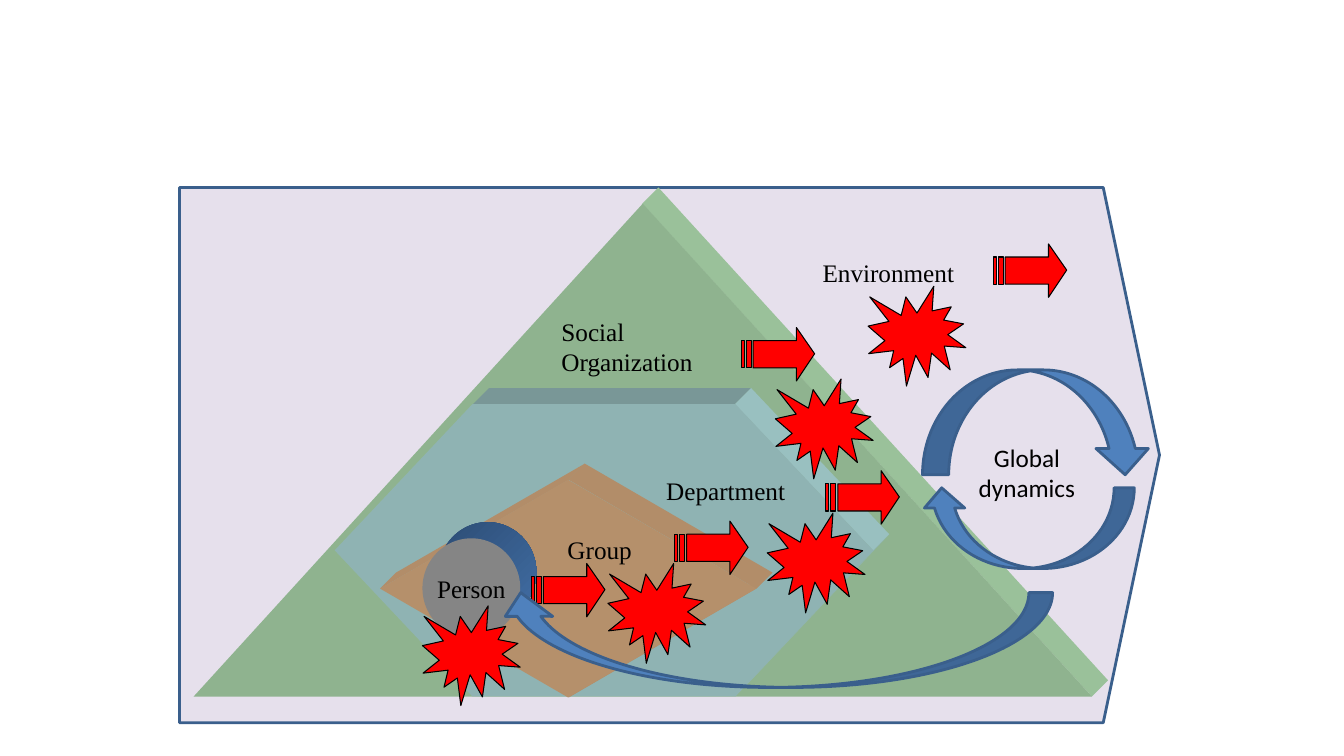
import pptx
import pptx.dml.color
import pptx.enum.shapes
import pptx.enum.text
import pptx.util

Inches = pptx.util.Inches
Pt = pptx.util.Pt
SHAPE = pptx.enum.shapes.MSO_SHAPE
ALIGN = pptx.enum.text.PP_ALIGN

COLORS = {
    "environment": "E6E0EC",
    "organization": "8FB38F",
    "organization side": "9AC19A",
    "department": "8FB3B3",
    "department top": "799797",
    "department side": "99C0C0",
    "group": "B5906B",
    "group side": "B28D69",
    "person": "858585",
    "person dark": "2C4D75",
    "person light": "426EA5",
    "red": "FF0000",
    "blue": "4F81BD",
    "outline": "3A5F8C",
    "black": "000000",
}
DEPTH = 0.16

LABELS = [
    ("Department", 6.51, 4.67, 1.4, 0.4),
    ("Social Organization", 5.47, 3.09, 1.79, 0.71),
    ("Environment", 8.06, 2.5, 2.11, 0.4),
    ("Group", 5.53, 5.25, 1.1, 0.4),
]
STRIPED_ARROWS = [(9.85, 2.42), (5.27, 5.59), (7.35, 3.25), (6.69, 5.17), (8.19, 4.67)]
BURSTS = [(6.03, 5.59), (7.61, 5.09), (7.69, 3.76), (8.61, 2.84), (4.19, 6.01)]


def rgb(name):
    return pptx.dml.color.RGBColor.from_string(COLORS[name])


def paint(shape, fill, line=None, width=0.75):
    shape.shadow.inherit = False
    shape.fill.solid()
    shape.fill.fore_color.rgb = rgb(fill)
    if line:
        shape.line.color.rgb = rgb(line)
        shape.line.width = Pt(width)
    else:
        shape.line.fill.background()


def add_preset(slide, kind, box, fill, line=None, width=0.75, adjustments=()):
    shape = slide.shapes.add_shape(kind, *map(Inches, box))
    for index, value in enumerate(adjustments):
        shape.adjustments[index] = value
    paint(shape, fill, line, width)
    return shape


def add_outline(slide, contours, fill, line=None):
    """Draw one freeform from closed contours given in inches."""
    contours = [[(Inches(x), Inches(y)) for x, y in contour] for contour in contours]
    builder = slide.shapes.build_freeform(*contours[0][0], scale=1.0)
    for index, contour in enumerate(contours):
        if index:
            builder.move_to(*contour[0])
        builder.add_line_segments(contour[1:], close=True)
    paint(builder.convert_to_shape(), fill, line)


def add_face(slide, start, end, fill):
    """Draw the side that an edge sweeps out, up and to the right."""
    back = [(x + DEPTH, y - DEPTH) for x, y in (end, start)]
    add_outline(slide, [[start, end, *back]], fill)


def format_text(text_frame, text, font_name, align):
    text_frame.text = text
    for paragraph in text_frame.paragraphs:
        paragraph.alignment = align
        for run in paragraph.runs:
            run.font.name = font_name
            run.font.size = Pt(18)
            run.font.color.rgb = rgb("black")


def add_label(slide, text, left, top, width, height,
              font_name="Times New Roman", align=ALIGN.LEFT):
    box = slide.shapes.add_textbox(*map(Inches, (left, top, width, height)))
    box.text_frame.word_wrap = True
    format_text(box.text_frame, text, font_name, align)


def add_striped_arrow(slide, left, top):
    def bar(start, end):
        return [(left + start, top + 0.13), (left + start, top + 0.4),
                (left + end, top + 0.4), (left + end, top + 0.13)]

    head = [(0.55, 0), (0.55, 0.13), (0.12, 0.13), (0.12, 0.4),
            (0.55, 0.4), (0.55, 0.53), (0.73, 0.26)]
    arrow = [(left + x, top + y) for x, y in head]
    add_outline(slide, [arrow, bar(0.05, 0.1), bar(0, 0.03)], "red", "black")


def add_curved_arrow(slide, kind, box, flipped=False):
    arrow = add_preset(slide, kind, box, "blue", "outline", 2)
    if flipped:
        arrow._element.spPr.get_or_add_xfrm().set("flipH", "1")


def add_organization(slide):
    add_face(slide, (6.37, 2.02), (10.83, 6.91), "organization side")
    add_preset(slide, SHAPE.ISOSCELES_TRIANGLE, (1.92, 2.02, 8.91, 4.89), "organization")


def add_department(slide):
    top_left, top_right = (4.69, 4.01), (7.29, 4.01)
    right, bottom_right = (8.66, 5.46), (7.29, 6.91)
    add_face(slide, right, bottom_right, "department")
    add_face(slide, top_left, top_right, "department top")
    add_face(slide, top_right, right, "department side")
    add_preset(slide, SHAPE.HEXAGON, (3.32, 4.01, 5.34, 2.9), "department",
               adjustments=(0.471, 1.155))


def add_group(slide):
    left, top, right, bottom = (3.77, 5.84), (5.64, 4.76), (7.5, 5.84), (5.64, 6.92)
    for start, end in ((left, top), (top, right), (right, bottom)):
        add_face(slide, start, end, "group side")
    add_preset(slide, SHAPE.FLOWCHART_DECISION, (3.77, 4.76, 3.73, 2.16), "group")


def add_person(slide):
    left, top, width, height = 4.19, 5.34, 0.97, 0.99
    back = add_preset(slide, SHAPE.OVAL, (left + DEPTH, top - DEPTH, width, height),
                      "person dark")
    back.fill.gradient()
    back.fill.gradient_angle = 315
    for stop, name in zip(back.fill.gradient_stops, ("person dark", "person light")):
        stop.color.rgb = rgb(name)
    front = add_preset(slide, SHAPE.OVAL, (left, top, width, height), "person")
    front.text_frame.word_wrap = False
    front.text_frame.vertical_anchor = pptx.enum.text.MSO_ANCHOR.MIDDLE
    format_text(front.text_frame, "Person", "Times New Roman", ALIGN.CENTER)


def main():
    presentation = pptx.Presentation()
    presentation.slide_width = Inches(13.33)
    presentation.slide_height = Inches(7.5)
    slide = presentation.slides.add_slide(presentation.slide_layouts[6])

    add_preset(slide, SHAPE.PENTAGON, (1.78, 1.86, 9.72, 5.31), "environment",
               "outline", 2, (0.105,))
    add_organization(slide)
    add_department(slide)
    add_group(slide)
    add_person(slide)
    for label in LABELS:
        add_label(slide, *label)
    for left, top in STRIPED_ARROWS:
        add_striped_arrow(slide, left, top)
    for left, top in BURSTS:
        add_preset(slide, SHAPE.EXPLOSION1, (left, top, 0.97, 0.99), "red", "black")
    add_label(slide, "Global dynamics", 9.46, 4.34, 1.45, 0.71, "Calibri", ALIGN.CENTER)
    add_curved_arrow(slide, SHAPE.CURVED_DOWN_ARROW, (9.15, 3.67, 2.27, 1.04))
    add_curved_arrow(slide, SHAPE.CURVED_UP_ARROW, (9.14, 4.84, 2.11, 0.8), flipped=True)
    add_curved_arrow(slide, SHAPE.CURVED_UP_ARROW, (4.93, 5.88, 5.51, 0.94), flipped=True)

    presentation.save("out.pptx")


if __name__ == "__main__":
    main()
